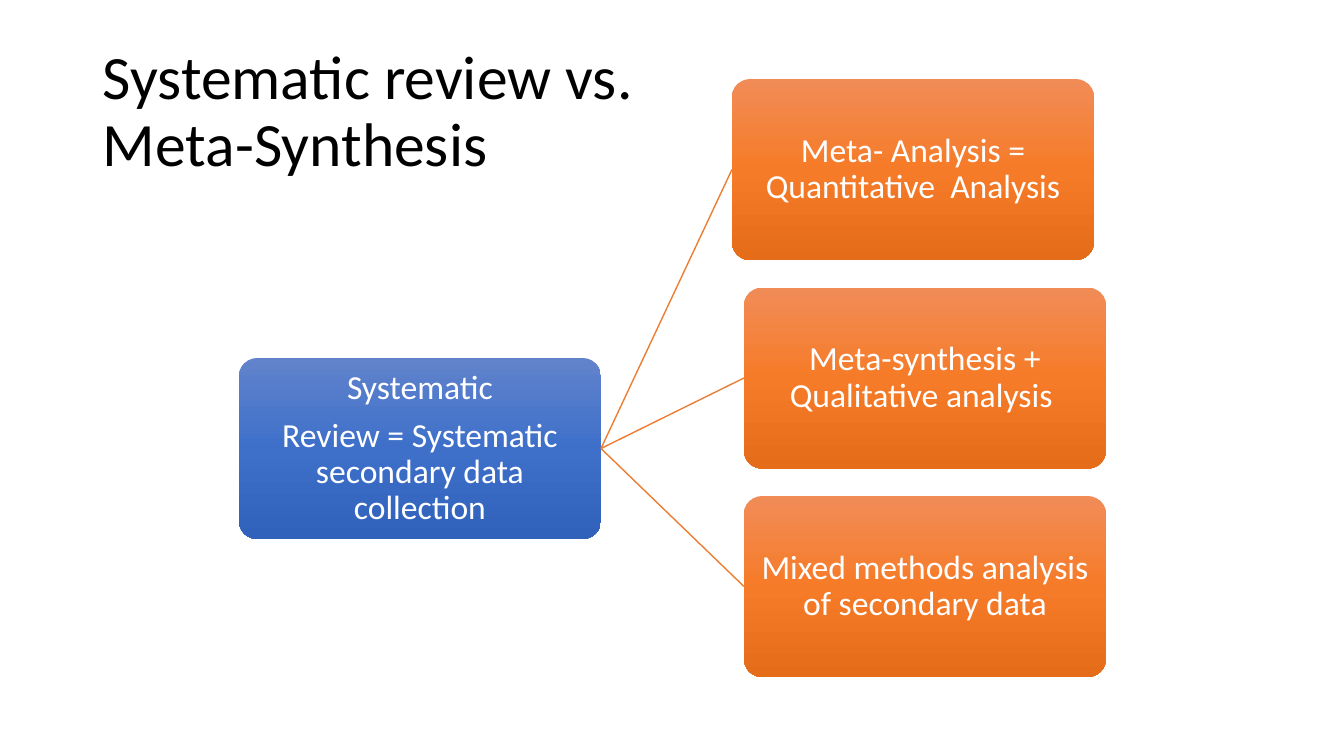
"""Build a slide that sets systematic review beside three kinds of analysis."""
from copy import deepcopy

from lxml import etree
from pptx import Presentation, util as u
from pptx.dml.color import RGBColor
from pptx.enum import shapes, text
from pptx.oxml.ns import qn

PX = 9071.43
SLIDE_SIZE = (1344, 756)
TITLE = "Systematic review vs. Meta-Synthesis"
TITLE_BOX = (93, 40, 580, 146)
REVIEW = ["Systematic", "Review = Systematic secondary data collection"]
REVIEW_AT = (239, 358)
ANALYSES = [
    (732, "Meta- Analysis = Quantitative  Analysis"),
    (744, "Meta-synthesis + Qualitative analysis "),
    (744, "Mixed methods analysis of secondary data"),
]
ANALYSIS_TOP, ANALYSIS_STEP = 79, 208.5
CARD_SIZE = (362, 181)
BLUES = ["6183CB", "3E70CA", "3062BB"]
ORANGES = ["F18C57", "F67B28", "E56C19"]
LINE_COLOR = "ED7D31"
CARD_FRAME = dict.fromkeys(
    ["margin_left", "margin_right", "margin_top", "margin_bottom"], u.Emu(int(6 * PX)))
CARD_PARAGRAPH = {"alignment": text.PP_ALIGN.CENTER, "space_after": u.Pt(8.4)}


def px(*lengths):
    return [u.Emu(round(length * PX)) for length in lengths]


def color(value):
    return RGBColor.from_string(value)


def set_all(target, values):
    for name, value in values.items():
        setattr(target, name, value)


def write(shape, lines, size, ink, frame_format, paragraph_format):
    frame = shape.text_frame
    set_all(frame, {"word_wrap": True, "vertical_anchor": text.MSO_ANCHOR.MIDDLE,
                    **frame_format})
    frame.text = "\n".join(lines)
    for paragraph in frame.paragraphs:
        set_all(paragraph, {"line_spacing": 0.9, **paragraph_format})
        font = paragraph.runs[0].font
        set_all(font, {"name": "Calibri", "size": u.Pt(size)})
        font.color.rgb = color(ink)


def add_card(slide, left, top, lines, shades):
    card = slide.shapes.add_shape(
        shapes.MSO_SHAPE.ROUNDED_RECTANGLE, *px(left, top, *CARD_SIZE))
    card.adjustments[0] = 0.1
    card.shadow.inherit = False
    card.line.fill.background()
    card.fill.gradient()
    card.fill.gradient_angle = 270
    stop_list = card._element.spPr.find(qn("a:gradFill")).find(qn("a:gsLst"))
    stop_list.append(deepcopy(stop_list[0]))
    for stop, position, shade in zip(card.fill.gradient_stops, (0, 0.5, 1), shades):
        stop.position = position
        stop.color.rgb = color(shade)
    write(card, lines, 24, "FFFFFF", CARD_FRAME, CARD_PARAGRAPH)
    return card


def join(slide, source, target):
    connector = slide.shapes.add_connector(shapes.MSO_CONNECTOR.STRAIGHT, 0, 0, 0, 0)
    connector.begin_connect(source, 3)
    connector.end_connect(target, 1)
    connector.line.color.rgb = color(LINE_COLOR)
    connector.line.width = u.Pt(1)
    etree.SubElement(connector._element.spPr, qn("a:effectLst"))


def main():
    presentation = Presentation()
    presentation.slide_width, presentation.slide_height = px(*SLIDE_SIZE)
    slide = presentation.slides.add_slide(presentation.slide_layouts[6])
    title = slide.shapes.add_textbox(*px(*TITLE_BOX))
    write(title, [TITLE], 44, "000000", {}, {})
    review = add_card(slide, *REVIEW_AT, REVIEW, BLUES)
    for row, (left, label) in enumerate(ANALYSES):
        top = ANALYSIS_TOP + row * ANALYSIS_STEP
        analysis = add_card(slide, left, top, [label], ORANGES)
        join(slide, review, analysis)
    presentation.save("out.pptx")


if __name__ == "__main__":
    main()
